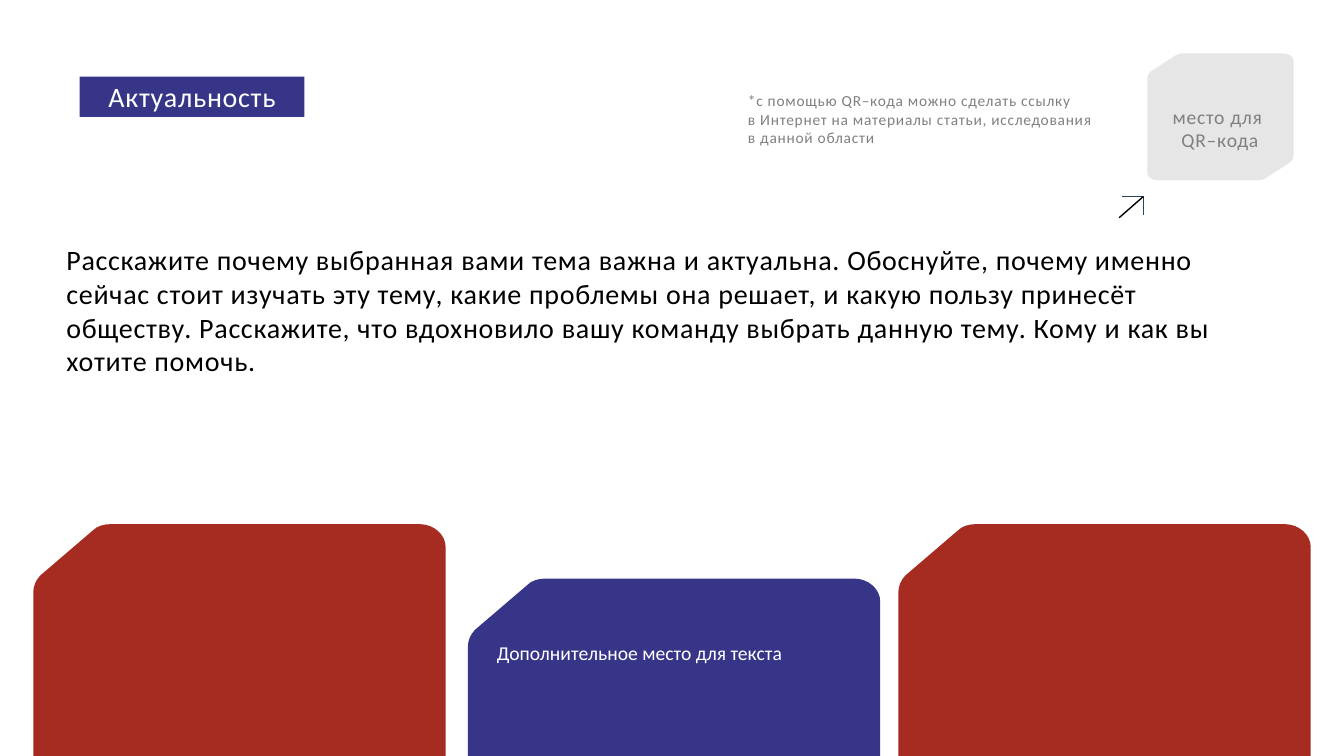
from pptx import Presentation
from pptx.dml.color import RGBColor
from pptx.enum.shapes import MSO_CONNECTOR
from pptx.enum.text import MSO_ANCHOR, PP_ALIGN
from pptx.oxml import parse_xml
from pptx.oxml.ns import nsdecls, qn
from pptx.util import Inches, Pt

STRAIGHT = MSO_CONNECTOR.STRAIGHT
LEFT, CENTER = PP_ALIGN.LEFT, PP_ALIGN.CENTER
TOP, MIDDLE = MSO_ANCHOR.TOP, MSO_ANCHOR.MIDDLE
TITLE_ONLY = 5
COLORS = {
    "black": "000000",
    "white": "FFFFFF",
    "gray": "808080",
    "light gray": "E6E6E6",
    "blue": "373588",
    "red": "A62B21",
    "arrowhead": "28445D",
}
PILL_GEOMETRY = (
    f'<a:prstGeom {nsdecls("a")} prst="roundRect"><a:avLst>'
    '<a:gd name="adj" fmla="val 50000"/></a:avLst></a:prstGeom>'
)


def color(name):
    """Return the named colour."""
    return RGBColor.from_string(COLORS[name])


class SlideBuilder:
    """Hold the text style and the current slide."""

    font = "Calibri"

    def __init__(self, slide):
        """Keep the slide to draw on."""
        self.slide = slide

    def format_text(self, shape, lines, size, color_name, align=LEFT, anchor=TOP, spacing=0.5):
        """Fill a shape with paragraphs in the slide style."""
        frame = shape.text_frame
        frame.word_wrap = True
        frame.vertical_anchor = anchor
        frame.text = "\n".join(lines)
        for paragraph in frame.paragraphs:
            paragraph.alignment = align
            for run in paragraph.runs:
                run.font.name = self.font
                run.font.size = Pt(size)
                run.font.color.rgb = color(color_name)
                run.font._element.set("spc", str(int(spacing * 100)))

    def text(self, left, top, width, height, lines, size, color_name, **style):
        """Add a text box."""
        box = self.slide.shapes.add_textbox(
            Inches(left), Inches(top), Inches(width), Inches(height))
        self.format_text(box, lines, size, color_name, **style)

    def title(self, left, top, width, height, text):
        """Shape the title placeholder as a filled pill."""
        title = self.slide.shapes.title
        title.left, title.top = Inches(left), Inches(top)
        title.width, title.height = Inches(width), Inches(height)
        title._element.spPr.append(parse_xml(PILL_GEOMETRY))
        title.fill.solid()
        title.fill.fore_color.rgb = color("blue")
        self.format_text(title, [text], 20, "white", align=CENTER, anchor=MIDDLE)

    def outline(self, points, closed):
        """Add a freeform through the points."""
        corners = [(Inches(x), Inches(y)) for x, y in points]
        builder = self.slide.shapes.build_freeform(*corners[0])
        builder.add_line_segments(corners[1:], close=closed)
        shape = builder.convert_to_shape()
        shape.shadow.inherit = False
        return shape

    def bend(self, shape):
        """Turn every three segments before a straight one into a curve."""
        outline = next(shape._element.iter(qn("a:path")))
        segments = outline.findall(qn("a:lnTo"))
        for start in range(0, len(segments), 4):
            curve = outline.makeelement(qn("a:cubicBezTo"), {})
            segments[start].addprevious(curve)
            for segment in segments[start:start + 3]:
                curve.append(segment[0])
                outline.remove(segment)

    def card(self, left, top, width, height, notch, corner, color_name):
        """Add a card with two cut and two rounded opposite corners."""
        cut_x, cut_y = notch
        round_x, round_y = corner
        half = [
            (0, cut_y), (0, 0.91 * cut_y),
            (0.03 * cut_x, 0.82 * cut_y), (0.09 * cut_x, 0.75 * cut_y),
            (0.77 * cut_x, 0.09 * cut_y), (0.82 * cut_x, 0.03 * cut_y),
            (0.91 * cut_x, 0), (cut_x, 0),
            (width - round_x, 0), (width - 0.45 * round_x, 0),
            (width, 0.45 * round_y), (width, round_y),
        ]
        points = half + [(width - x, height - y) for x, y in half]
        shape = self.outline([(left + x, top + y) for x, y in points], True)
        self.bend(shape)
        shape.fill.solid()
        shape.fill.fore_color.rgb = color(color_name)
        shape.line.fill.background()

    def arrow(self, left, top, right, bottom):
        """Add a thin arrow that points up and right."""
        head = self.outline([(left + 0.03, top), (right, top), (right, bottom - 0.03)], False)
        head.fill.background()
        head.line.color.rgb = color("arrowhead")
        head.line.width = Pt(1)
        shaft = self.slide.shapes.add_connector(
            STRAIGHT, Inches(left), Inches(bottom), Inches(right), Inches(top))
        shaft.line.color.rgb = color("black")
        shaft.line.width = Pt(1)
        properties = shaft._element.spPr
        properties.append(properties.makeelement(qn("a:effectLst"), {}))
        self.slide.shapes.add_group_shape([head, shaft])


def main():
    """Build and save the slide."""
    presentation = Presentation()
    presentation.slide_width = Inches(13.33)
    presentation.slide_height = Inches(7.5)
    slide = presentation.slides.add_slide(presentation.slide_layouts[TITLE_ONLY])
    builder = SlideBuilder(slide)

    builder.title(0.79, 0.76, 2.23, 0.4, "Актуальность")
    builder.text(0.56, 2.36, 11.97, 1.45, [
        "Расскажите почему выбранная вами тема важна и актуальна. Обоснуйте, почему именно "
        "сейчас стоит изучать эту тему, какие проблемы она решает, и какую пользу принесёт "
        "обществу. Расскажите, что вдохновило вашу команду выбрать данную тему. Кому и как "
        "вы хотите помочь."], 20, "black")
    builder.text(7.32, 0.86, 4, 0.66, [
        "*с помощью QR–кода можно сделать ссылку",
        "в Интернет на материалы статьи, исследования",
        "в данной области"], 11, "gray")
    builder.card(11.38, 0.53, 1.45, 1.26, (0.36, 0.24), (0.11, 0.07), "light gray")
    builder.text(11.27, 0.99, 1.66, 0.57, ["место для ", "QR–кода"], 14, "gray", align=CENTER)
    builder.arrow(11.1, 1.95, 11.34, 2.16)

    for left, top, fill in [(4.64, 5.74, "blue"), (0.33, 5.2, "red"), (8.91, 5.2, "red")]:
        builder.card(left, top, 4.09, 4.8, (0.77, 0.68), (0.26, 0.23), fill)
    builder.text(4.83, 6.31, 3.71, 0.34, ["Дополнительное место для текста"],
                 14, "white", spacing=0)

    presentation.save("out.pptx")


if __name__ == "__main__":
    main()
